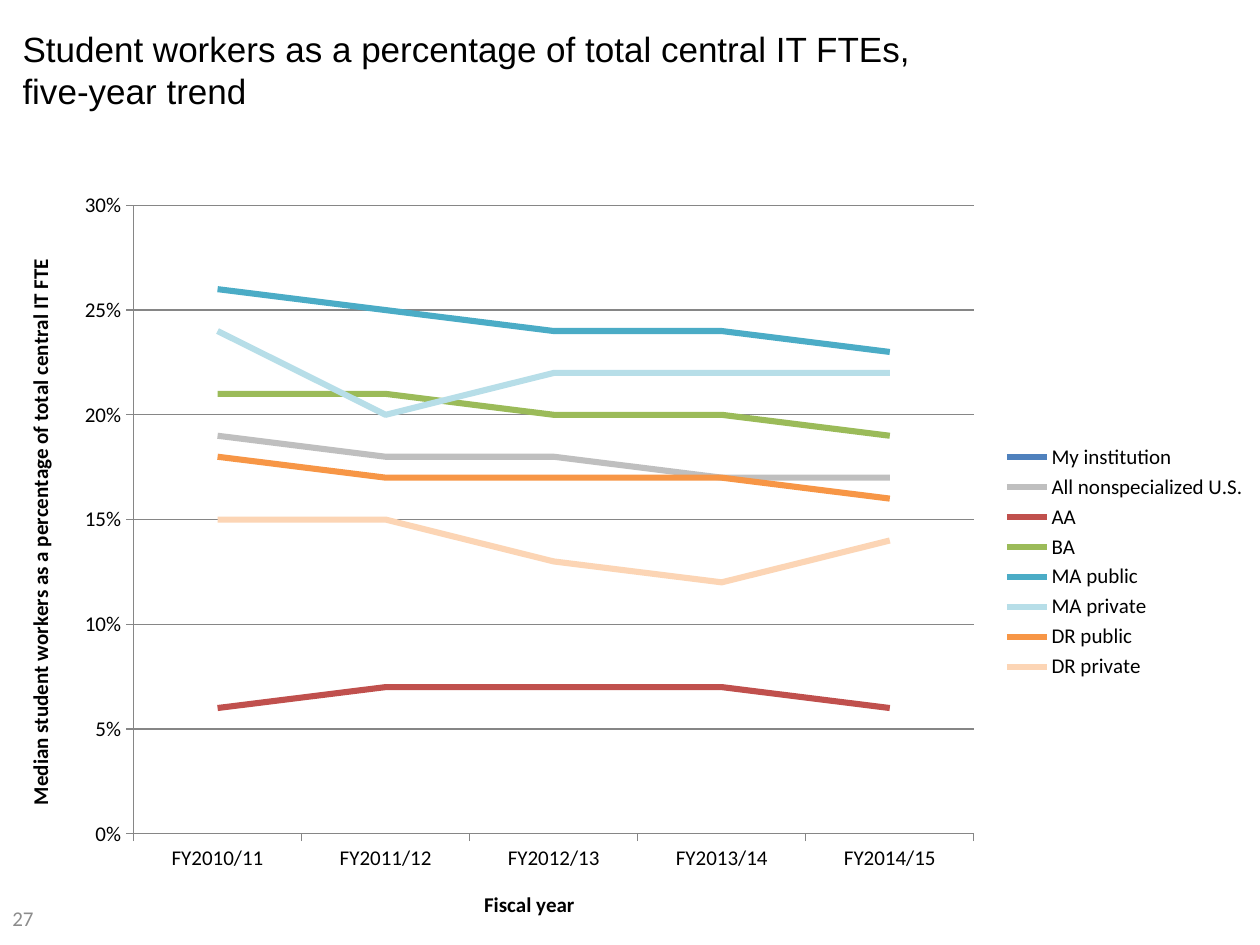
from dataclasses import dataclass
from lxml.etree import SubElement
from pptx import Presentation
from pptx.chart.data import CategoryChartData
from pptx.dml.color import RGBColor
from pptx.enum.chart import XL_CHART_TYPE, XL_LEGEND_POSITION, XL_TICK_MARK
from pptx.enum.text import MSO_ANCHOR, PP_ALIGN
from pptx.oxml.ns import qn
from pptx.util import Cm, Pt


@dataclass(frozen=True)
class Theme:
    """Colours, fonts and type sizes of the slide."""
    ink: str = "000000"
    muted: str = "8C8C8C"
    rule: str = "868686"
    heading_font: str = "Arial"
    body_font: str = "Calibri"
    heading_size: float = 20
    body_size: float = 12
    trend_width: float = 3.5
    rule_width: float = 0.75


THEME = Theme()
YEARS = ["FY2010/11", "FY2011/12", "FY2012/13", "FY2013/14", "FY2014/15"]
TRENDS = [
    ("My institution", "4F81BD", [None] * 5),
    ("All nonspecialized U.S.", "BFBFBF", [0.19, 0.18, 0.18, 0.17, 0.17]),
    ("AA", "C0504D", [0.06, 0.07, 0.07, 0.07, 0.06]),
    ("BA", "9BBB59", [0.21, 0.21, 0.20, 0.20, 0.19]),
    ("MA public", "4BACC6", [0.26, 0.25, 0.24, 0.24, 0.23]),
    ("MA private", "B7DEE8", [0.24, 0.20, 0.22, 0.22, 0.22]),
    ("DR public", "F79646", [0.18, 0.17, 0.17, 0.17, 0.16]),
    ("DR private", "FCD5B5", [0.15, 0.15, 0.13, 0.12, 0.14]),
]


def style_font(font, family, size, color, bold=False):
    """Set the family, size, colour and weight of a font."""
    font.name, font.size, font.bold = family, Pt(size), bold
    font.color.rgb = RGBColor.from_string(color)


def style_line(line, color, width):
    """Set the colour and width of a line."""
    line.color.rgb = RGBColor.from_string(color)
    line.width = Pt(width)


def place_heading(slide, left, top, width, height):
    """Move the title placeholder into its box and write its two lines."""
    heading = slide.shapes.title
    heading.left, heading.top, heading.width, heading.height = left, top, width, height
    frame = heading.text_frame
    frame.word_wrap = True
    frame.vertical_anchor = MSO_ANCHOR.TOP
    paragraph = frame.paragraphs[0]
    paragraph.alignment = PP_ALIGN.LEFT
    lines = ["Student workers as a percentage of total central IT FTEs,", "five-year trend"]
    for index, words in enumerate(lines):
        if index:
            paragraph.add_line_break()
        run = paragraph.add_run()
        run.text = words
        style_font(run.font, THEME.heading_font, THEME.heading_size, THEME.ink)


def title_axis(axis, words):
    """Give an axis its bold title, rule colour and outside ticks."""
    run = axis.axis_title.text_frame.paragraphs[0].add_run()
    run.text = words
    style_font(run.font, THEME.body_font, THEME.body_size, THEME.ink, bold=True)
    style_line(axis.format.line, THEME.rule, THEME.rule_width)
    axis.major_tick_mark = XL_TICK_MARK.OUTSIDE
    axis.minor_tick_mark = XL_TICK_MARK.NONE


def fix_plot_area(chart, **fractions):
    """Pin the inner plot area to fractions of the chart box."""
    plot_area = chart.plots[0]._element.getparent()
    layout = plot_area.find(qn("c:layout"))
    if layout is None:
        layout = SubElement(plot_area, qn("c:layout"))
        plot_area.insert(0, layout)
    manual = SubElement(layout, qn("c:manualLayout"))
    settings = {"layoutTarget": "inner", "xMode": "edge", "yMode": "edge", **fractions}
    for name, value in settings.items():
        SubElement(manual, qn(f"c:{name}")).set("val", str(value))


def place_trend_chart(slide, left, top, width, height):
    """Draw the five-year line chart in its box."""
    trend_data = CategoryChartData(number_format="0%")
    trend_data.categories = YEARS
    for name, _, shares in TRENDS:
        trend_data.add_series(name, shares)
    chart = slide.shapes.add_chart(
        XL_CHART_TYPE.LINE, left, top, width, height, trend_data).chart
    style_font(chart.font, THEME.body_font, THEME.body_size, THEME.ink)
    chart.has_title = False
    chart.has_legend = True
    chart.legend.position = XL_LEGEND_POSITION.RIGHT
    chart.legend.include_in_layout = False

    chart.plots[0].vary_by_categories = False
    for series, (_, color, _) in zip(chart.plots[0].series, TRENDS):
        series.smooth = False
        style_line(series.format.line, color, THEME.trend_width)

    title_axis(chart.category_axis, "Fiscal year")
    shares_axis = chart.value_axis
    title_axis(shares_axis, "Median student workers as a percentage of total central IT FTE")
    shares_axis.minimum_scale, shares_axis.maximum_scale = 0, 0.3
    shares_axis.major_unit = 0.05
    shares_axis.tick_labels.number_format = "0%"
    shares_axis.tick_labels.number_format_is_linked = False
    style_line(shares_axis.major_gridlines.format.line, THEME.rule, THEME.rule_width)
    fix_plot_area(chart, x=0.106, y=0.035, w=0.667, h=0.82)


def place_page_number(slide, left, top, width, height):
    """Write the page number in its box."""
    frame = slide.shapes.add_textbox(left, top, width, height).text_frame
    frame.word_wrap = True
    frame.vertical_anchor = MSO_ANCHOR.MIDDLE
    run = frame.paragraphs[0].add_run()
    run.text = "27"
    style_font(run.font, THEME.body_font, THEME.body_size, THEME.muted)


def main():
    """Build and save the slide."""
    deck = Presentation()
    deck.slide_width, deck.slide_height = Cm(25.4), Cm(19.05)
    slide = deck.slides.add_slide(deck.slide_layouts[5])
    place_heading(slide, Cm(0.2), Cm(0.43), Cm(23.75), Cm(2.54))
    place_trend_chart(slide, Cm(0), Cm(3.6), Cm(25.4), Cm(15.45))
    place_page_number(slide, Cm(0), Cm(17.98), Cm(2.74), Cm(1.07))
    deck.save("out.pptx")


if __name__ == "__main__":
    main()
